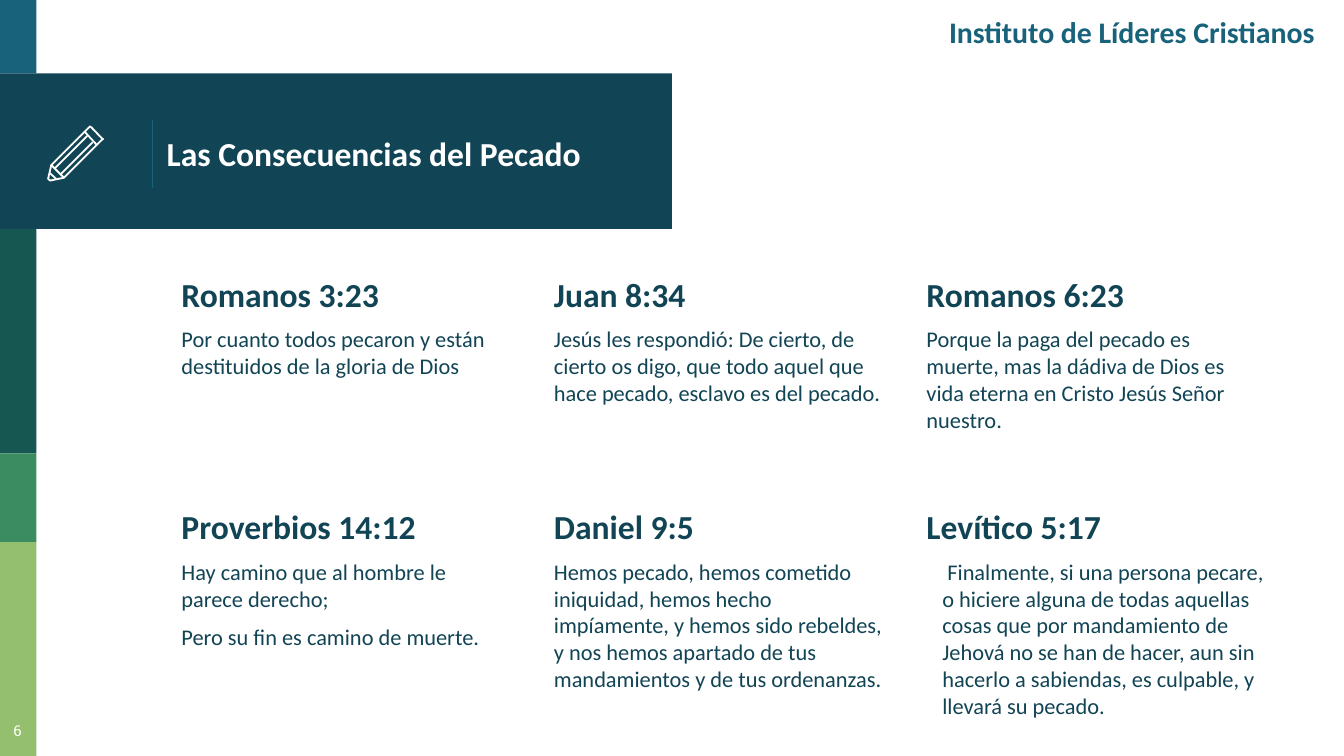
import pptx
import pptx.dml.color
import pptx.enum.shapes
import pptx.enum.text
import pptx.oxml.ns
import pptx.util
from lxml import etree

Cm, Pt = pptx.util.Cm, pptx.util.Pt
ALIGN = pptx.enum.text.PP_ALIGN
ANCHOR = pptx.enum.text.MSO_ANCHOR
NAVY, TEAL, WHITE = "114454", "18637B", "FFFFFF"


def color(code):
    return pptx.dml.color.RGBColor.from_string(code)


def write(frame, lines, anchor=ANCHOR.TOP, align=ALIGN.LEFT, inset=0.25):
    """Fill a text frame with (text, size, bold, colour, font) lines."""
    style = {"word_wrap": True, "auto_size": pptx.enum.text.MSO_AUTO_SIZE.NONE,
             "vertical_anchor": anchor, "margin_left": Cm(0.25), "margin_right": Cm(0.25),
             "margin_top": Cm(inset), "margin_bottom": Cm(0.25)}
    for key, value in style.items():
        setattr(frame, key, value)
    for i, (text, size, bold, code, font) in enumerate(lines):
        para = frame.add_paragraph() if i else frame.paragraphs[0]
        para.alignment = align
        para.space_before = Pt(6 if i else 0)
        run = para.add_run()
        run.text = text
        for key, value in {"size": Pt(size), "bold": bold, "name": font}.items():
            setattr(run.font, key, value)
        run.font.color.rgb = color(code)


deck = pptx.Presentation()
deck.slide_width, deck.slide_height = Cm(25.4), Cm(14.29)
slide = deck.slides.add_slide(deck.slide_layouts[5])
shapes = slide.shapes

# Side strip and title band: top, bottom, width, colour
bands = [
    (0, 1.39, 0.69, TEAL),
    (1.39, 4.33, 12.7, NAVY),
    (4.33, 8.57, 0.69, "165751"),
    (8.57, 10.25, 0.69, "3B8D61"),
    (10.25, 14.29, 0.69, "94BF6E"),
]
for top, end, width, code in bands:
    band = shapes.add_shape(pptx.enum.shapes.MSO_SHAPE.RECTANGLE,
                            0, Cm(top), Cm(width), Cm(end - top))
    band.shadow.inherit = False
    band.fill.solid()
    band.fill.fore_color.rgb = color(code)
    band.line.fill.background()

# Rule beside the title
rule = shapes.add_connector(pptx.enum.shapes.MSO_CONNECTOR.STRAIGHT,
                            Cm(2.88), Cm(2.26), Cm(2.88), Cm(3.56))
rule.line.color.rgb = color(TEAL)
rule.line.width = Pt(0.75)
etree.SubElement(rule.element.spPr, pptx.oxml.ns.qn("a:effectLst"))

# Title, brought in front of the band
title = shapes.title
place = {"left": Cm(2.9), "top": Cm(1.47), "width": Cm(9.91), "height": Cm(2.84)}
for key, value in place.items():
    setattr(title, key, value)
write(title.text_frame, [("Las Consecuencias del Pecado", 18, True, WHITE, "Calibri")],
      ANCHOR.MIDDLE)
title.element.getparent().append(title.element)

# Verses in a grid of three columns
verses = [
    ("Romanos 3:23", "Por cuanto todos pecaron y están destituidos de la gloria de Dios"),
    ("Juan 8:34", "Jesús les respondió: De cierto, de cierto os digo, que todo aquel que "
                  "hace pecado, esclavo es del pecado."),
    ("Romanos 6:23", "Porque la paga del pecado es muerte, mas la dádiva de Dios es vida "
                     "eterna en Cristo Jesús Señor nuestro."),
    ("Proverbios 14:12", "Hay camino que al hombre le parece derecho;",
     "Pero su fin es camino de muerte."),
    ("Daniel 9:5", "Hemos pecado, hemos cometido iniquidad, hemos hecho impíamente, y hemos "
                   "sido rebeldes, y nos hemos apartado de tus mandamientos y de tus ordenanzas."),
    ("Levítico 5:17", " Finalmente, si una persona pecare, o hiciere alguna de todas aquellas "
                      "cosas que por mandamiento de Jehová no se han de hacer, aun sin hacerlo "
                      "a sabiendas, es culpable, y llevará su pecado."),
]
for i, (head, *body) in enumerate(verses):
    row, col = divmod(i, 3)
    last = i == len(verses) - 1
    box = shapes.add_textbox(Cm(3.18 + 7.04 * col), Cm(4.93 + 4.39 * row),
                             Cm(7.04 if last else 6.71), Cm(3.63))
    write(box.text_frame, [(head, 18, True, NAVY, "Calibri")]
          + [(text, 12, False, NAVY, "Calibri") for text in body])
# The last verse is indented
box.text_frame.paragraphs[1]._p.get_or_add_pPr().set("marL", str(Cm(0.3)))

# Pencil icon: closed flag, points
strokes = [
    (True, [(1.93, 2.62), (1.73, 2.41), (1.7, 2.39), (1.68, 2.41), (1.6, 2.49),
            (1.83, 2.74), (1.93, 2.64), (1.95, 2.63)]),
    (False, [(1.75, 2.69), (1.14, 3.3)]),
    (False, [(1.6, 2.49), (0.97, 3.12), (0.91, 3.38), (0.94, 3.41), (0.97, 3.41),
             (1.21, 3.36), (1.83, 2.74)]),
    (False, [(1.04, 3.18), (1.65, 2.57)]),
    (False, [(1.06, 3.38), (0.94, 3.27)]),
    (False, [(0.97, 3.12), (1.21, 3.36)]),
]
pencil = shapes.add_group_shape()
for closed, points in strokes:
    start, *rest = [(Cm(x), Cm(y)) for x, y in points]
    pen = pencil.shapes.build_freeform(*start)
    pen.add_line_segments(rest, close=closed)
    stroke = pen.convert_to_shape()
    stroke.shadow.inherit = False
    stroke.fill.background()
    stroke.line.color.rgb = color(WHITE)
    stroke.line.width = Pt(0.96)

# Page number and institute name
page = shapes.add_textbox(Cm(-0.15), Cm(13.39), Cm(0.97), Cm(0.89))
write(page.text_frame, [("6", 8, False, WHITE, "Roboto Slab")], align=ALIGN.CENTER)
name = shapes.add_textbox(Cm(15.7), Cm(0.15), Cm(9.4), Cm(1.55))
write(name.text_frame, [("Instituto de Líderes Cristianos", 16, True, TEAL, "Calibri")],
      align=ALIGN.RIGHT, inset=0.1)

deck.save("out.pptx")
